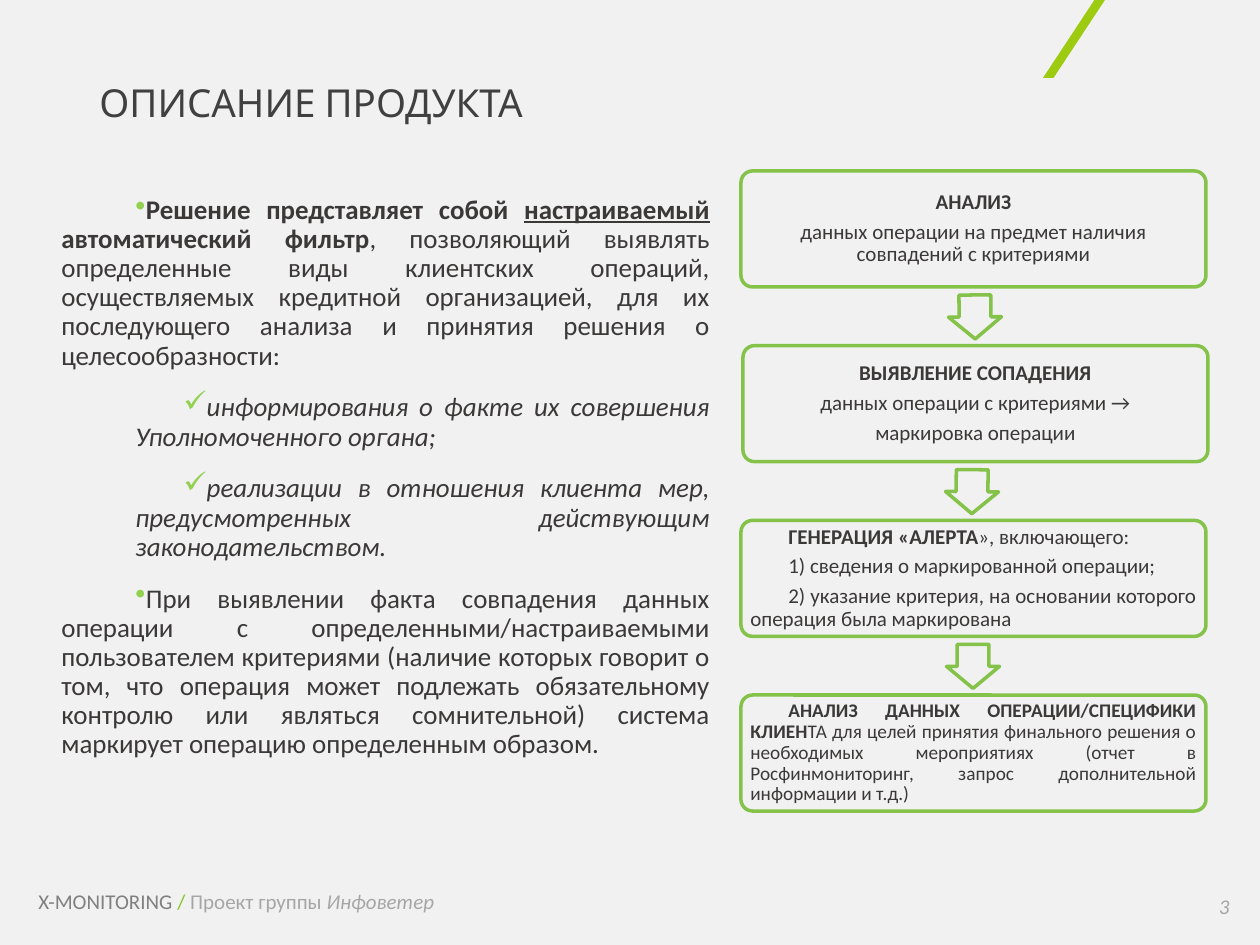
"""Build the product description slide with its four-step process."""
import pptx
import pptx.dml.color
import pptx.enum.shapes
import pptx.enum.text
import pptx.oxml.ns
import pptx.util
from lxml import etree

SHAPE = pptx.enum.shapes.MSO_SHAPE
ALIGN = pptx.enum.text.PP_ALIGN
ANCHOR = pptx.enum.text.MSO_ANCHOR

INK, GREEN, LIME, GRAY = "3B3838", "84C249", "92D050", "A6A6A6"
TITLE = "ОПИСАНИЕ ПРОДУКТА"
FOOTER = [("X-MONITORING ", "", "808080"), ("/ ", "", "84C225"),
          ("Проект группы ", "", GRAY), ("Инфоветер", "i", GRAY)]
PAGE = "3"

# bullet, left margin, first-line indent, runs
BODY = [
    ("•", 0, 74, [
        ("Решение представляет собой ", "b"), ("настраиваемый", "bu"),
        (" автоматический фильтр", "b"),
        (", позволяющий выявлять определенные виды клиентских операций, "
         "осуществляемых кредитной организацией, для их последующего анализа "
         "и принятия решения о целесообразности:", "")]),
    ("✓", 74, 48, [
        ("информирования о факте их совершения Уполномоченного органа;", "i")]),
    ("✓", 74, 48, [
        ("реализации в отношения клиента мер, предусмотренных действующим "
         "законодательством.", "i")]),
    ("•", 0, 74, [
        ("При выявлении факта совпадения данных операции с "
         "определенными/настраиваемыми пользователем критериями (наличие "
         "которых говорит о том, что операция может подлежать обязательному "
         "контролю или являться сомнительной) система маркирует операцию "
         "определенным образом.", "")]),
]

# shift in x, text size, alignment, first-line indent, paragraphs of runs
STEPS = [
    (0, 12, ALIGN.CENTER, 0, [
        [("АНАЛИЗ", "b")],
        [("данных операции на предмет наличия совпадений с критериями", "")]]),
    (2, 12, ALIGN.CENTER, 0, [
        [("ВЫЯВЛЕНИЕ СОПАДЕНИЯ", "b")],
        [("данных операции с критериями →", "")],
        [("маркировка операции", "")]]),
    (0, 12, ALIGN.JUSTIFY, 38, [
        [("ГЕНЕРАЦИЯ «АЛЕРТА", "b"), ("», включающего:", "")],
        [("1) сведения о маркированной операции;", "")],
        [("2) указание критерия, на основании которого операция была "
          "маркирована", "")]]),
    (0, 11, ALIGN.JUSTIFY, 38, [
        [("АНАЛИЗ ДАННЫХ ОПЕРАЦИИ/СПЕЦИФИКИ КЛИЕН", "b"),
         ("ТА для целей принятия финального решения о необходимых "
          "мероприятиях (отчет в Росфинмониторинг, запрос дополнительной "
          "информации и т.д.)", "")]]),
]
# centre x and rotation of each arrow between steps
ARROWS = [(975, 89.5), (972, 90.5), (973, 90)]
BOX_X, BOX_Y, BOX_W, BOX_H, PITCH = 741, 171, 465, 116, 174.7
ARROW_W, ARROW_H, ARROW_DROP = 44, 53, 146


def px(n):
    return pptx.util.Emu(round(n * 914400 / 126))


def rgb(color):
    return pptx.dml.color.RGBColor.from_string(color)


def add_run(p, text, style, size, color, font="Calibri"):
    r = p.add_run()
    r.text = text
    r.font.name, r.font.size = font, pptx.util.Pt(size)
    r.font.color.rgb = rgb(color)
    r.font.bold, r.font.italic = "b" in style, "i" in style
    r.font.underline = "u" in style


def add_text(s, x, y, w, h, anchor=ANCHOR.TOP):
    tf = s.shapes.add_textbox(px(x), px(y), px(w), px(h)).text_frame
    tf.word_wrap = True
    tf.vertical_anchor = anchor
    return tf


def paragraph(tf, i):
    return tf.add_paragraph() if i else tf.paragraphs[0]


def indent(p, left, first):
    pPr = p._p.get_or_add_pPr()
    pPr.set("marL", str(px(left)))
    pPr.set("indent", str(px(first)))
    return pPr


def add_bullet(pPr, char):
    qn = pptx.oxml.ns.qn
    clr = etree.SubElement(pPr, qn("a:buClr"))
    etree.SubElement(clr, qn("a:srgbClr"), val=LIME)
    etree.SubElement(pPr, qn("a:buSzPct"), val="110000")
    etree.SubElement(pPr, qn("a:buChar"), char=char)


def add_shape(s, kind, x, y, w, h, adjustments, fill=None, line=None):
    sp = s.shapes.add_shape(kind, px(x), px(y), px(w), px(h))
    sp.shadow.inherit = False
    for i, value in enumerate(adjustments):
        sp.adjustments[i] = value
    if fill:
        sp.fill.solid()
        sp.fill.fore_color.rgb = rgb(fill)
    else:
        sp.fill.background()
    if line:
        sp.line.color.rgb, sp.line.width = rgb(line), pptx.util.Pt(2)
    else:
        sp.line.fill.background()
    return sp


def add_body(s):
    tf = add_text(s, 49, 190, 673, 662)
    for i, (char, left, first, runs) in enumerate(BODY):
        p = paragraph(tf, i)
        add_bullet(indent(p, left, first), char)
        p.alignment, p.line_spacing = ALIGN.JUSTIFY, 0.9
        p.space_before = pptx.util.Pt(10 if i else 0)
        p.space_after = pptx.util.Pt(3)
        for text, style in runs:
            add_run(p, text, style, 15.4, INK)


def add_step(s, i, shift, size, align, first, paragraphs):
    sp = add_shape(s, SHAPE.ROUNDED_RECTANGLE, BOX_X + shift,
                   BOX_Y + i * PITCH, BOX_W, BOX_H, [0.1], line=GREEN)
    tf = sp.text_frame
    tf.word_wrap, tf.vertical_anchor = True, ANCHOR.MIDDLE
    tf.margin_left = tf.margin_right = px(6)
    tf.margin_top = tf.margin_bottom = px(6)
    for j, runs in enumerate(paragraphs):
        p = paragraph(tf, j)
        indent(p, 0, first)
        p.alignment, p.line_spacing = align, 0.9
        p.space_after = pptx.util.Pt(4)
        for text, style in runs:
            add_run(p, text, style, size, INK)


def main():
    prs = pptx.Presentation()
    prs.slide_width, prs.slide_height = px(1260), px(945)
    s = prs.slides.add_slide(prs.slide_layouts[6])
    s.background.fill.solid()
    s.background.fill.fore_color.rgb = rgb("F1F1F1")

    add_shape(s, SHAPE.PARALLELOGRAM, 1043, 0, 62, 78, [0.83], fill="9CCB12")
    p = add_text(s, 87, 50, 1086, 111, ANCHOR.MIDDLE).paragraphs[0]
    p.line_spacing = 0.9
    add_run(p, TITLE, "", 22, "404040", "Karla")
    add_body(s)

    for i, step in enumerate(STEPS):
        add_step(s, i, *step)
    for i, (center, angle) in enumerate(ARROWS):
        sp = add_shape(s, SHAPE.RIGHT_ARROW, center - ARROW_W / 2,
                       BOX_Y + i * PITCH + ARROW_DROP - ARROW_H / 2,
                       ARROW_W, ARROW_H, [0.6, 0.5], line=GREEN)
        sp.rotation = angle

    p = add_text(s, 26, 882, 507, 38).paragraphs[0]
    for text, style, color in FOOTER:
        add_run(p, text, style, 12, color)
    p = add_text(s, 959, 881, 283, 50, ANCHOR.MIDDLE).paragraphs[0]
    p.alignment = ALIGN.RIGHT
    add_run(p, PAGE, "i", 12, GRAY)
    prs.save("out.pptx")


if __name__ == "__main__":
    main()
